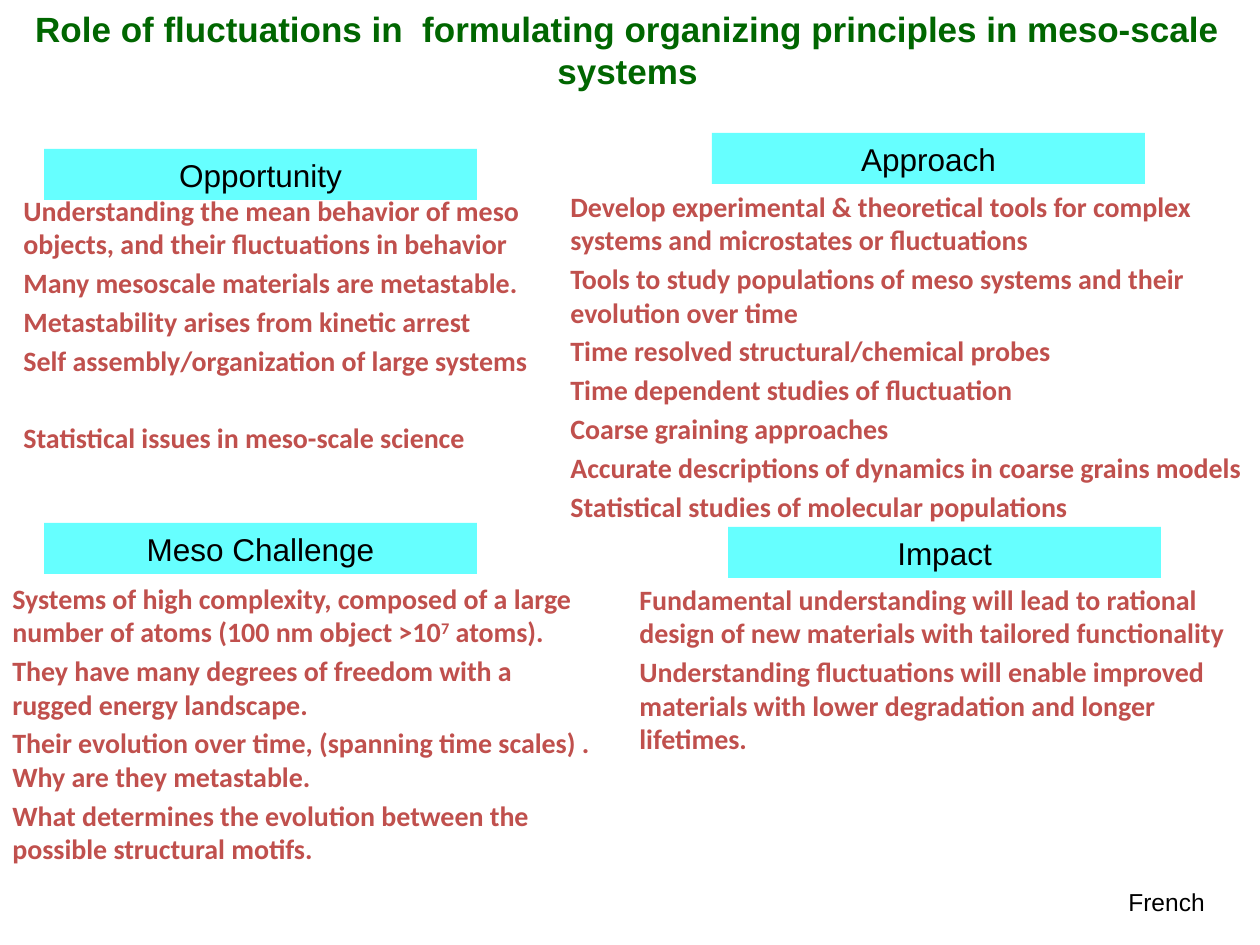
from pptx import Presentation
from pptx.dml.color import RGBColor
from pptx.enum.shapes import MSO_SHAPE
from pptx.enum.text import MSO_ANCHOR, MSO_AUTO_SIZE, PP_ALIGN
from pptx.util import Emu, Pt

PX_PER_INCH = 126
GREEN = RGBColor(0x00, 0x66, 0x00)
CYAN = RGBColor(0x66, 0xFF, 0xFF)
RED = RGBColor(0xC0, 0x50, 0x4D)
BLACK = RGBColor(0x00, 0x00, 0x00)

TITLE_FORMAT = {"name": "Arial", "size": Pt(20), "bold": True}
HEADING_FORMAT = {"name": "Arial", "size": Pt(18), "bold": False}
BODY_FORMAT = {"name": "Calibri", "size": Pt(16), "bold": True}
AUTHOR_FORMAT = {"name": "Arial", "size": Pt(14), "bold": False}

TITLE = "Role of fluctuations in  formulating organizing principles in meso-scale systems"
HEADING_SIZE = (433, 51)
PARA_GAP = 3
SECTION_GAP = 25

# Each quadrant: heading, heading position, body box, paragraphs.
# A paragraph is a list of spans; a span marked by SUPERSCRIPT is raised.
SUPERSCRIPT = "^"
QUADRANTS = [
    ("Opportunity", (44, 149), (11, 187, 587, 277), [
        ["Understanding the mean behavior of meso objects, and their fluctuations in behavior"],
        ["Many mesoscale materials are metastable."],
        ["Metastability arises from kinetic arrest"],
        ["Self assembly/organization of large systems"],
        ["Statistical issues in meso-scale science"],
    ]),
    ("Meso Challenge", (44, 523), (0, 575, 607, 300), [
        ["Systems of high complexity, composed of a large number of atoms (100 nm object >10",
         SUPERSCRIPT + "7", " atoms)."],
        ["They have many degrees of freedom with a rugged energy landscape."],
        ["Their evolution over time, (spanning time scales) . Why are they metastable."],
        ["What determines the evolution between the possible structural motifs."],
    ]),
    ("Approach", (712, 133), (558, 183, 702, 350), [
        ["Develop experimental & theoretical tools for complex systems and microstates or fluctuations"],
        ["Tools to study populations of meso systems and their evolution over time"],
        ["Time resolved structural/chemical probes"],
        ["Time dependent studies of fluctuation"],
        ["Coarse graining approaches"],
        ["Accurate descriptions of dynamics in coarse grains models"],
        ["Statistical studies of molecular populations"],
    ]),
    ("Impact", (728, 527), (627, 576, 633, 305), [
        ["Fundamental understanding will lead to rational design of new materials with tailored functionality"],
        ["Understanding fluctuations will enable improved materials with lower degradation and longer lifetimes."],
    ]),
]
WIDE_GAP_BEFORE = "Statistical issues in meso-scale science"


def px(length):
    return Emu(round(length * 914400 / PX_PER_INCH))


def format_font(font, values, color):
    for name, value in values.items():
        setattr(font, name, value)
    font.color.rgb = color


def add_span(para, text, values, color):
    span = para.add_run()
    span.text = text.removeprefix(SUPERSCRIPT)
    format_font(span.font, values, color)
    if text.startswith(SUPERSCRIPT):
        span.font._element.set("baseline", "30000")


def set_title(slide, text, box):
    title = slide.shapes.title
    title.left, title.top, title.width, title.height = map(px, box)
    frame = title.text_frame
    frame.auto_size = MSO_AUTO_SIZE.NONE
    frame.vertical_anchor = MSO_ANCHOR.TOP
    para = frame.paragraphs[0]
    para.alignment = PP_ALIGN.CENTER
    add_span(para, text, TITLE_FORMAT, GREEN)


def add_heading(slide, text, position):
    bar = slide.shapes.add_shape(MSO_SHAPE.RECTANGLE, *map(px, position + HEADING_SIZE))
    bar.shadow.inherit = False
    bar.fill.solid()
    bar.fill.fore_color.rgb = CYAN
    bar.line.fill.background()
    para = bar.text_frame.paragraphs[0]
    para.alignment = PP_ALIGN.CENTER
    add_span(para, text, HEADING_FORMAT, BLACK)


def add_text(slide, paragraphs, box, values, color, wrap=True):
    frame = slide.shapes.add_textbox(*map(px, box)).text_frame
    frame.word_wrap = wrap
    for index, spans in enumerate(paragraphs):
        para = frame.add_paragraph() if index else frame.paragraphs[0]
        if index:
            para.space_before = Pt(SECTION_GAP if spans[0] == WIDE_GAP_BEFORE else PARA_GAP)
        for text in spans:
            add_span(para, text, values, color)


def main():
    deck = Presentation()
    deck.slide_width, deck.slide_height = px(1260), px(945)
    slide = deck.slides.add_slide(deck.slide_layouts.get_by_name("Title Only"))

    # Title
    set_title(slide, TITLE, (11, 1, 1233, 97))

    # Four quadrants
    for heading, position, box, paragraphs in QUADRANTS:
        add_heading(slide, heading, position)
        add_text(slide, paragraphs, box, BODY_FORMAT, RED)

    # Author
    add_text(slide, [["French"]], (1116, 881, 102, 43), AUTHOR_FORMAT, BLACK, wrap=False)

    deck.save("out.pptx")


if __name__ == "__main__":
    main()
